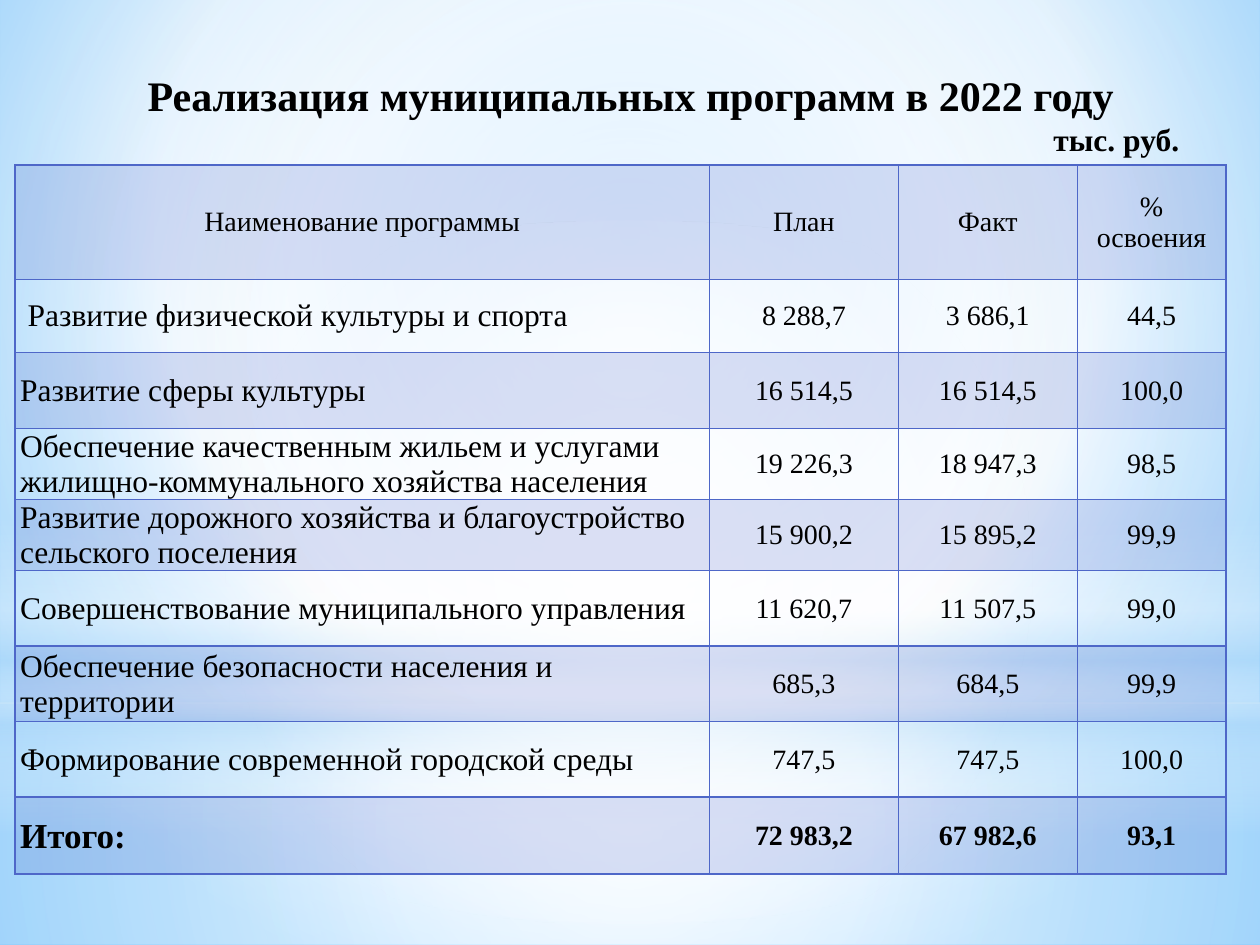
from lxml.etree import SubElement
from pptx import Presentation
from pptx.dml.color import RGBColor
from pptx.enum.shapes import MSO_SHAPE
from pptx.enum.text import MSO_ANCHOR, PP_ALIGN
from pptx.oxml.ns import qn
from pptx.util import Inches, Pt

FONT = "Times New Roman"
BLACK = "000000"
ACCENT = "4E67C8"
CENTER = (50, 50, 50, 50)
COLUMN_WIDTHS = (5.51, 1.5, 1.42, 1.18)
ROW_HEIGHTS = (0.91, 0.58, 0.6, 0.46, 0.46, 0.6, 0.6, 0.6, 0.61)
ROWS = (
    ("Наименование программы", "План", "Факт", "% освоения"),
    ("Развитие физической культуры и спорта", "8 288,7", "3 686,1", "44,5"),
    ("Развитие сферы культуры", "16 514,5", "16 514,5", "100,0"),
    ("Обеспечение качественным жильем и услугами жилищно-коммунального хозяйства населения",
     "19 226,3", "18 947,3", "98,5"),
    ("Развитие дорожного хозяйства и благоустройство сельского поселения",
     "15 900,2", "15 895,2", "99,9"),
    ("Совершенствование муниципального управления", "11 620,7", "11 507,5", "99,0"),
    ("Обеспечение безопасности населения и территории", "685,3", "684,5", "99,9"),
    ("Формирование современной городской среды", "747,5", "747,5", "100,0"),
    ("Итого:", "72 983,2", "67 982,6", "93,1"),
)
GLOWS = (
    (MSO_SHAPE.RECTANGLE, (0, 5.58, 10, 1.92),
     ((0, "FFFFFF", 91), (37, "FFFFFF", 76), (100, "B4DCFA", 79)), CENTER),
    (MSO_SHAPE.RECTANGLE, (0, 0, 10, 5.58),
     ((0, "FFFFFF", 89), (48, "FFFFFF", 62), (100, "B4DCFA", 79)), CENTER),
    (MSO_SHAPE.RECTANGLE, (0, 4.12, 10, 2.5),
     ((0, "FFFFFF", 0), (29, "FFFFFF", 30), (45, "B4DCFA", 40),
      (55, "FFFFFF", 26), (65, "B4DCFA", 60), (100, "FFFFFF", 0)), None),
    (MSO_SHAPE.OVAL, (0, 1.75, 10, 5.58),
     ((0, "FFFFFF", 100), (56, "FFFFFF", 0)), CENTER),
)


def color(value):
    """Turn a hex string into a colour."""
    return RGBColor.from_string(value)


def add_color(parent, value, opacity=100):
    """Append a colour element with an opacity in percent."""
    element = SubElement(parent, qn("a:srgbClr"), val=value)
    if opacity < 100:
        SubElement(element, qn("a:alpha"), val=str(opacity * 1000))


def apply_gradient(element, stops, focus):
    """Swap the solid fill for a circular gradient, or a vertical one without focus."""
    solid = element.find(".//" + qn("a:solidFill"))
    gradient = solid.makeelement(qn("a:gradFill"), {"rotWithShape": "1"})
    stop_list = SubElement(gradient, qn("a:gsLst"))
    for position, value, opacity in stops:
        stop = SubElement(stop_list, qn("a:gs"), pos=str(position * 1000))
        add_color(stop, value, opacity)
    if focus:
        circle = SubElement(gradient, qn("a:path"), path="circle")
        sides = {side: str(share * 1000) for side, share in zip("ltrb", focus)}
        SubElement(circle, qn("a:fillToRect"), sides)
    else:
        SubElement(gradient, qn("a:lin"), ang="5400000", scaled="0")
    solid.getparent().replace(solid, gradient)


def add_background(slide):
    """Fill the slide background with its gradient."""
    slide.background.fill.solid()
    stops = ((0, "9ED5FF", 100), (60, "FFFFFF", 100), (100, "5BB9FF", 100))
    apply_gradient(slide.element.find(".//" + qn("p:bgPr")), stops, (20, 10, 20, 60))


def add_glow(slide, kind, box, stops, focus):
    """Add a translucent gradient shape just behind the title."""
    shape = slide.shapes.add_shape(kind, *map(Inches, box))
    shape.shadow.inherit = False
    shape.line.fill.background()
    shape.fill.solid()
    apply_gradient(shape.element, stops, focus)
    slide.shapes.title.element.addprevious(shape.element)


def format_paragraph(paragraph, size, bold, alignment):
    """Format a paragraph and its runs."""
    paragraph.alignment = alignment
    for run in paragraph.runs:
        run.font.name = FONT
        run.font.size = Pt(size)
        run.font.bold = bold
        run.font.color.rgb = color(BLACK)


def fill_title(title):
    """Place the title and the unit line below it."""
    title.left, title.top, title.width, title.height = map(Inches, (0.55, 0.47, 8.91, 0.47))
    frame = title.text_frame
    frame.text = "Реализация муниципальных программ в 2022 году\nтыс. руб."
    frame.word_wrap = True
    frame.vertical_anchor = MSO_ANCHOR.TOP
    frame.margin_top = Inches(0.08)
    formats = ((24, PP_ALIGN.CENTER), (18, PP_ALIGN.RIGHT))
    for paragraph, (size, alignment) in zip(frame.paragraphs, formats):
        paragraph.space_before = Pt(0)
        format_paragraph(paragraph, size, True, alignment)


def set_borders(cell):
    """Draw a thin line on each side of a cell."""
    properties = cell._tc.get_or_add_tcPr()
    for side in ("a:lnL", "a:lnR", "a:lnT", "a:lnB"):
        line = SubElement(properties, qn(side), w=str(Pt(1)))
        add_color(SubElement(line, qn("a:solidFill")), ACCENT)


def fill_cell(cell, text, row, column):
    """Write and format one table cell."""
    total = row == len(ROWS) - 1
    label = column == 0 and row > 0
    cell.text = text
    cell.vertical_anchor = MSO_ANCHOR.MIDDLE
    if row < 2:
        margins = (0.1, 0.05, 0.1, 0.05)
    else:
        margins = (0.04 if label else 0.01, 0.01, 0.01, 0)
    cell.margin_left, cell.margin_top, cell.margin_right, cell.margin_bottom = map(Inches, margins)
    size = (20 if total else 18) if label else 16
    alignment = PP_ALIGN.LEFT if label else PP_ALIGN.CENTER
    format_paragraph(cell.text_frame.paragraphs[0], size, total, alignment)
    set_borders(cell)
    if row % 2:
        cell.fill.background()
    else:
        cell.fill.solid()
        cell.fill.fore_color.rgb = color(ACCENT)
        tint = cell._tc.tcPr.find(qn("a:solidFill"))[0]
        SubElement(tint, qn("a:alpha"), val="20000")


def add_programs_table(slide):
    """Add the table of municipal programs."""
    box = map(Inches, (0.12, 1.31, sum(COLUMN_WIDTHS), sum(ROW_HEIGHTS)))
    table = slide.shapes.add_table(len(ROWS), len(COLUMN_WIDTHS), *box).table
    table.first_row = table.horz_banding = False
    for column, width in zip(table.columns, COLUMN_WIDTHS):
        column.width = Inches(width)
    for row, height in zip(table.rows, ROW_HEIGHTS):
        row.height = Inches(height)
    for row, texts in enumerate(ROWS):
        for column, text in enumerate(texts):
            fill_cell(table.cell(row, column), text, row, column)


def main():
    """Build and save the presentation."""
    presentation = Presentation()
    presentation.slide_width, presentation.slide_height = Inches(10), Inches(7.5)
    slide = presentation.slides.add_slide(presentation.slide_layouts[5])
    add_background(slide)
    for glow in GLOWS:
        add_glow(slide, *glow)
    fill_title(slide.shapes.title)
    add_programs_table(slide)
    presentation.save("out.pptx")


if __name__ == "__main__":
    main()
